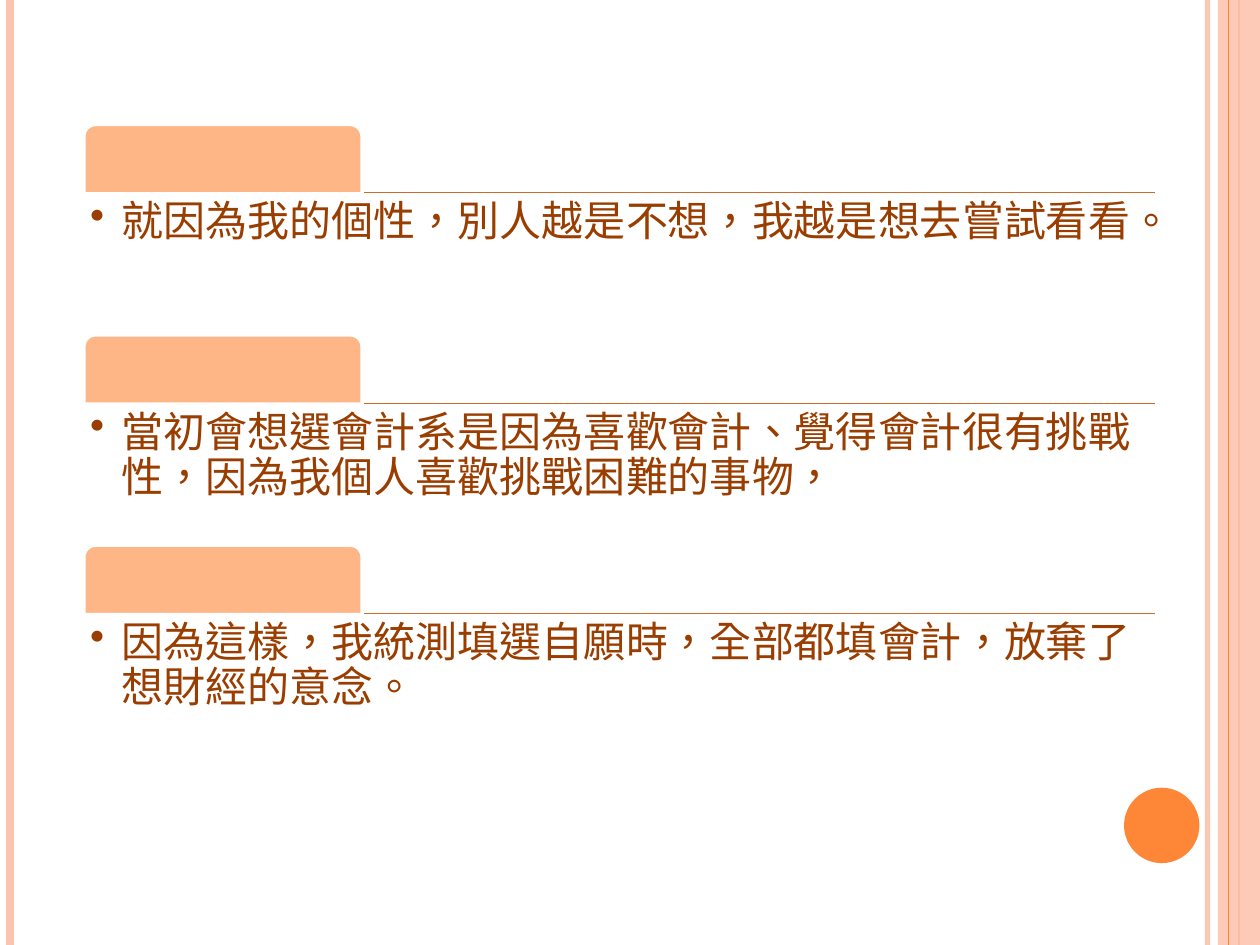
from dataclasses import dataclass

import lxml.etree
import pptx
import pptx.dml.color
import pptx.enum.lang
import pptx.enum.shapes
import pptx.enum.text
import pptx.oxml.ns
import pptx.shapes.base
import pptx.slide
import pptx.util

Cm = pptx.util.Cm
Pt = pptx.util.Pt
qn = pptx.oxml.ns.qn
SHAPE = pptx.enum.shapes.MSO_SHAPE

COLOURS = {
    "white": "FFFFFF",
    "pink": "FEC3AE",
    "orange": "FE8637",
    "rule": "CB6B2C",
    "tab": "FEB687",
    "text": "9A3D01",
}
FONT = "Noto Sans CJK SC"
PAGE_WIDTH, PAGE_HEIGHT = 25.4, 19.05
LEFT, SECTION_WIDTH = 1.69, 21.59
FIRST_RULE, SECTION_PITCH = 3.91, 4.24
TAB_WIDTH, TAB_HEIGHT, BODY_HEIGHT = 5.61, 1.4, 2.77
REASONS = [
    "就因為我的個性，別人越是不想，我越是想去嘗試看看。",
    "當初會想選會計系是因為喜歡會計、覺得會計很有挑戰性，因為我個人喜歡挑戰困難的事物，",
    "因為這樣，我統測填選自願時，全部都填會計，放棄了想財經的意念。",
]


@dataclass
class Stroke:
    colour: str
    weight: float
    opacity: int = 100


@dataclass
class Rail:
    x: float
    stroke: Stroke


@dataclass
class Area:
    left: float
    top: float
    width: float
    height: float


RAILS_BELOW_BAND = [
    Rail(24.34, Stroke("pink", 3, 93)),
    Rail(0.21, Stroke("pink", 4.5)),
    Rail(24.98, Stroke("orange", 1.5)),
]
RAIL_ABOVE_BAND = Rail(24.77, Stroke("orange", 0.75))


def rgb(name: str) -> pptx.dml.color.RGBColor:
    return pptx.dml.color.RGBColor.from_string(COLOURS[name])


def set_opacity(properties: lxml.etree._Element, percent: int) -> None:
    """Make the first colour under the given properties translucent."""
    colour = next(properties.iter(qn("a:srgbClr")))
    lxml.etree.SubElement(colour, qn("a:alpha"), val=str(percent * 1000))


def add_line(page: pptx.slide.Slide, start: tuple[float, float],
             end: tuple[float, float], stroke: Stroke) -> None:
    line = page.shapes.add_connector(
        pptx.enum.shapes.MSO_CONNECTOR.STRAIGHT,
        *(Cm(value) for value in (*start, *end)))
    line.line.color.rgb = rgb(stroke.colour)
    line.line.width = Pt(stroke.weight)
    properties = line._element.spPr
    if stroke.opacity < 100:
        set_opacity(properties, stroke.opacity)
    lxml.etree.SubElement(properties, qn("a:effectLst"))


def add_rail(page: pptx.slide.Slide, rail: Rail) -> None:
    add_line(page, (rail.x, 0), (rail.x, PAGE_HEIGHT), rail.stroke)


def add_area(page: pptx.slide.Slide, kind: SHAPE, area: Area, fill: str,
             outline: Stroke | None = None) -> pptx.shapes.base.BaseShape:
    shape = page.shapes.add_shape(
        kind, Cm(area.left), Cm(area.top), Cm(area.width), Cm(area.height))
    shape.shadow.inherit = False
    shape.fill.solid()
    shape.fill.fore_color.rgb = rgb(fill)
    if outline:
        shape.line.color.rgb = rgb(outline.colour)
        shape.line.width = Pt(outline.weight)
    else:
        shape.line.fill.background()
    return shape


def write_bullet(shape: pptx.shapes.base.BaseShape, text: str) -> None:
    frame = shape.text_frame
    frame_format = {
        "word_wrap": True,
        "vertical_anchor": pptx.enum.text.MSO_ANCHOR.TOP,
        **{f"margin_{side}": Cm(0.13)
           for side in ("left", "top", "right", "bottom")},
    }
    for name, value in frame_format.items():
        setattr(frame, name, value)

    para = frame.paragraphs[0]
    para_format = {
        "alignment": pptx.enum.text.PP_ALIGN.LEFT,
        "level": 1,
        "line_spacing": 0.9,
        "space_after": Pt(3.6),
    }
    for name, value in para_format.items():
        setattr(para, name, value)
    properties = para._p.get_or_add_pPr()
    properties.set("marL", str(Cm(0.64)))
    properties.set("indent", str(-Cm(0.64)))
    lxml.etree.SubElement(properties, qn("a:buChar"), char="•")

    span = para.add_run()
    span.text = text
    span_format = {
        "name": FONT,
        "size": Pt(24),
        "language_id": pptx.enum.lang.MSO_LANGUAGE_ID.TRADITIONAL_CHINESE,
    }
    for name, value in span_format.items():
        setattr(span.font, name, value)
    span.font.color.rgb = rgb("text")
    lxml.etree.SubElement(span._r.get_or_add_rPr(), qn("a:ea"), typeface=FONT)


def add_section(page: pptx.slide.Slide, rule_y: float, text: str) -> None:
    """Draw a blank tab above the rule and a bulleted reason below it."""
    tab = add_area(page, SHAPE.ROUND_2_SAME_RECTANGLE,
                   Area(LEFT, rule_y - TAB_HEIGHT, TAB_WIDTH, TAB_HEIGHT),
                   "tab", Stroke("white", 2))
    tab.adjustments[0] = 0.17
    body = add_area(page, SHAPE.RECTANGLE,
                    Area(LEFT, rule_y, SECTION_WIDTH, BODY_HEIGHT),
                    "white", Stroke("white", 0.75))
    write_bullet(body, text)


def add_frame(page: pptx.slide.Slide) -> None:
    for rail in RAILS_BELOW_BAND:
        add_rail(page, rail)
    band = add_area(page, SHAPE.RECTANGLE,
                    Area(24.55, 0, PAGE_WIDTH - 24.55, PAGE_HEIGHT), "pink")
    set_opacity(band._element.spPr, 87)
    add_rail(page, RAIL_ABOVE_BAND)
    add_area(page, SHAPE.OVAL, Area(22.66, 15.88, 1.52, 1.52), "orange")


def main() -> None:
    deck = pptx.Presentation()
    deck.slide_width, deck.slide_height = Cm(PAGE_WIDTH), Cm(PAGE_HEIGHT)
    page = deck.slides.add_slide(deck.slide_layouts[6])
    page.background.fill.solid()
    page.background.fill.fore_color.rgb = rgb("white")
    add_frame(page)
    rules = [FIRST_RULE + index * SECTION_PITCH for index in range(len(REASONS))]
    for rule_y in reversed(rules):
        add_line(page, (LEFT, rule_y), (LEFT + SECTION_WIDTH, rule_y),
                 Stroke("rule", 2))
    for rule_y, text in zip(rules, REASONS):
        add_section(page, rule_y, text)
    deck.save("out.pptx")


if __name__ == "__main__":
    main()
